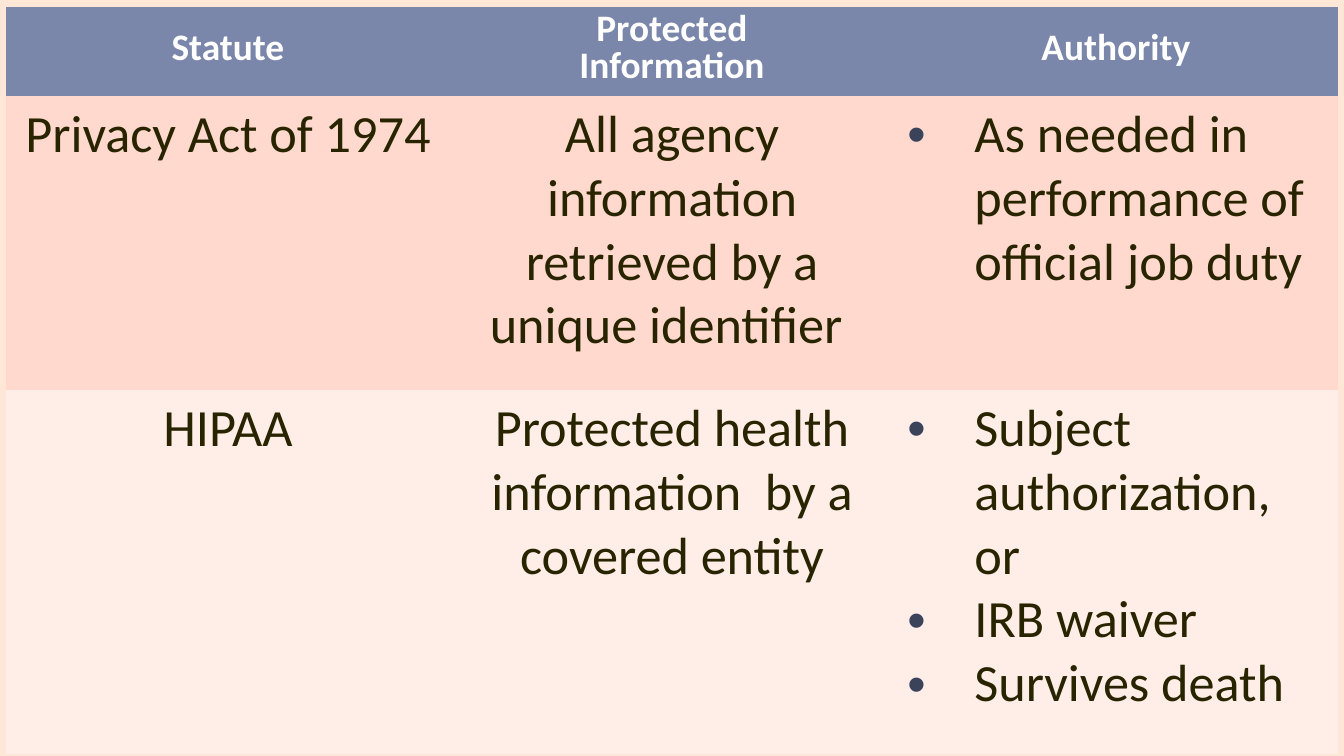
"""Build a slide with a table comparing privacy statutes."""
from lxml.etree import SubElement
from pptx import Presentation
from pptx.dml.color import RGBColor
from pptx.enum.text import MSO_ANCHOR, PP_ALIGN
from pptx.oxml.ns import qn
from pptx.util import Pt

PX = 914400 / 134.4
COLUMN_WIDTH = 444
ROW_HEIGHTS = [89, 294, 364]
ROW_FILLS = ["7B87AA", "FFD9CE", "FFEDE8"]
BULLET_INDENT = 67
NO_STYLE = "{2D5ABB26-0587-4C30-8999-92F81FD0307C}"

STATUTES = [
    [["Statute"], ["Protected", "Information"], ["Authority"]],
    [
        ["Privacy Act of 1974"],
        ["All agency information retrieved by a unique identifier "],
        ["As needed in performance of  official job duty"],
    ],
    [
        ["HIPAA"],
        ["Protected health information  by a covered entity"],
        ["Subject authorization, or", "IRB waiver", "Survives death"],
    ],
]


def px(length):
    return round(length * PX)


def write(frame, lines, size=28, color="292400", bold=False, spacing=None, bulleted=False):
    for index, line in enumerate(lines):
        paragraph = frame.add_paragraph() if index else frame.paragraphs[0]
        paragraph.alignment = PP_ALIGN.LEFT if bulleted else PP_ALIGN.CENTER
        if spacing:
            paragraph.line_spacing = Pt(spacing)
        run = paragraph.add_run()
        run.text = line
        run.font.name = "Calibri"
        run.font.size = Pt(size)
        run.font.bold = bold
        run.font.color.rgb = RGBColor.from_string(color)
        if bulleted:
            properties = paragraph._p.get_or_add_pPr()
            properties.set("marL", str(px(BULLET_INDENT)))
            properties.set("indent", str(-px(BULLET_INDENT)))
            SubElement(SubElement(properties, qn("a:buClr")), qn("a:srgbClr"), val="3B435B")
            SubElement(properties, qn("a:buFont"), typeface="Arial")
            SubElement(properties, qn("a:buChar"), char="•")


deck = Presentation()
deck.slide_width, deck.slide_height = px(1344), px(756)
slide = deck.slides.add_slide(deck.slide_layouts[6])
slide.background.fill.solid()
slide.background.fill.fore_color.rgb = RGBColor.from_string("FFE7D7")

comparison = slide.shapes.add_table(
    3, 3, px(6), px(7), px(3 * COLUMN_WIDTH), px(sum(ROW_HEIGHTS))
).table
comparison._tbl.tblPr.find(qn("a:tableStyleId")).text = NO_STYLE
comparison.horz_banding = False
for column in comparison.columns:
    column.width = px(COLUMN_WIDTH)

for row, (statute, height, fill) in enumerate(zip(STATUTES, ROW_HEIGHTS, ROW_FILLS)):
    comparison.rows[row].height = px(height)
    for column, lines in enumerate(statute):
        cell = comparison.cell(row, column)
        cell.fill.solid()
        cell.fill.fore_color.rgb = RGBColor.from_string(fill)
        if row == 0:
            cell.vertical_anchor = MSO_ANCHOR.MIDDLE
            write(cell.text_frame, lines, size=20, color="FFFFFF", bold=True, spacing=20)
        else:
            write(cell.text_frame, lines, bulleted=column == 2)

deck.save("out.pptx")
